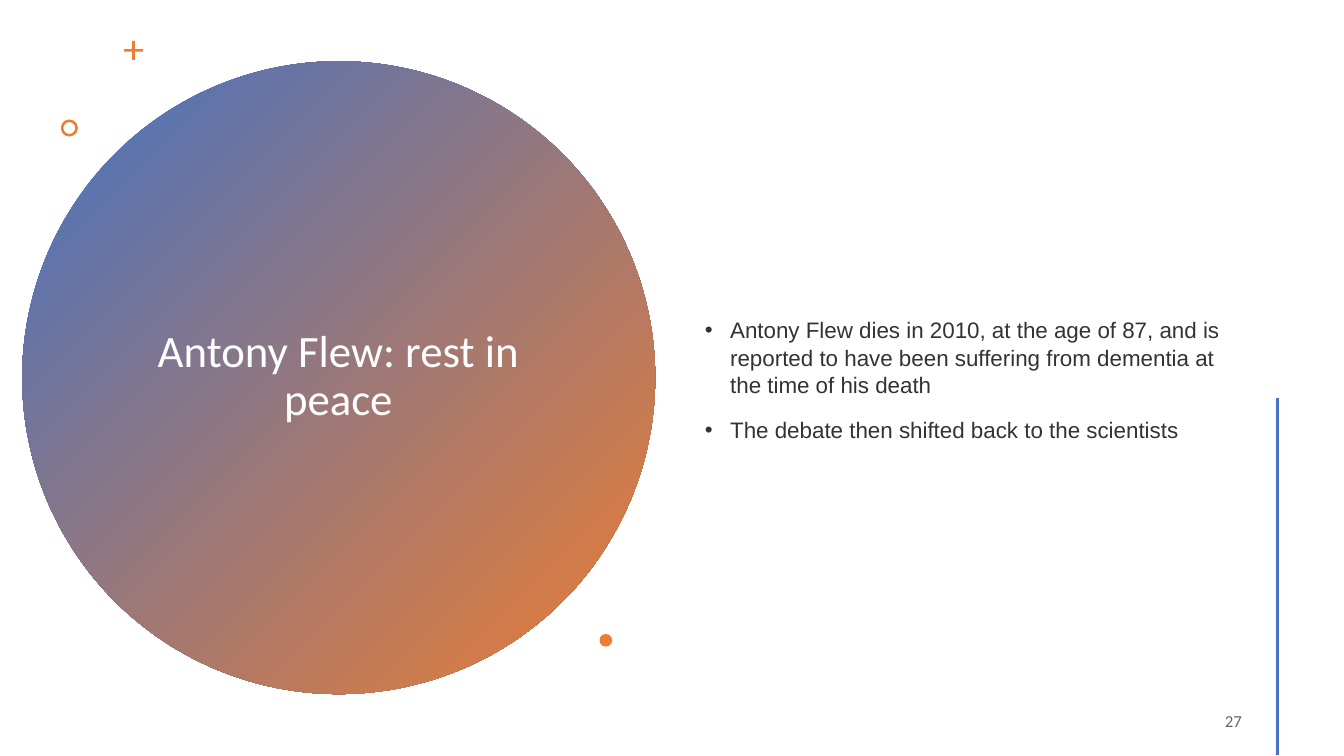
from dataclasses import dataclass

from lxml import etree
from pptx import Presentation
from pptx import util as u
from pptx.dml.color import RGBColor
from pptx.enum import shapes, text
from pptx.oxml import ns

BLUE = RGBColor(0x44, 0x72, 0xC4)
ORANGE = RGBColor(0xED, 0x7D, 0x31)
WHITE = RGBColor(0xFF, 0xFF, 0xFF)
DARK_GREY = RGBColor(0x33, 0x33, 0x33)
MID_GREY = RGBColor(0x66, 0x66, 0x66)

TITLE = "Antony Flew: rest in peace"
POINTS = [
    "Antony Flew dies in 2010, at the age of 87, and is reported to have been "
    "suffering from dementia at the time of his death",
    "The debate then shifted back to the scientists",
]
PAGE_NUMBER = "27"


@dataclass
class Box:
    left: int
    top: int
    width: int
    height: int

    def share(self, left, top, width, height):
        return Box(
            self.left + int(self.width * left / 100),
            self.top + int(self.height * top / 100),
            int(self.width * width / 100),
            int(self.height * height / 100),
        )

    def bounds(self):
        return self.left, self.top, self.width, self.height


def move(shape, box):
    shape.left, shape.top, shape.width, shape.height = box.bounds()


def style_font(paragraph, name, size, color):
    paragraph.font.name = name
    paragraph.font.size = u.Pt(size)
    paragraph.font.color.rgb = color


def prepare_frame(shape):
    frame = shape.text_frame
    frame.word_wrap = True
    frame.auto_size = text.MSO_AUTO_SIZE.NONE
    frame.vertical_anchor = text.MSO_ANCHOR.MIDDLE
    return frame


def add_plain_shape(slide, kind, box):
    shape = slide.shapes.add_shape(kind, *box.bounds())
    shape.shadow.inherit = False
    shape.line.fill.background()
    return shape


def add_title_circle(slide, box):
    circle = add_plain_shape(slide, shapes.MSO_SHAPE.OVAL, box)
    circle.fill.gradient()
    circle.fill.gradient_angle = 315
    for stop, color in zip(circle.fill.gradient_stops, (BLUE, ORANGE)):
        stop.color.rgb = color

    title = slide.shapes.title
    title.element.addprevious(circle.element)
    move(title, box.share(18.2, 12.7, 63.5, 74.4))
    frame = prepare_frame(title)
    frame.text = TITLE
    paragraph = frame.paragraphs[0]
    paragraph.alignment = text.PP_ALIGN.CENTER
    paragraph.line_spacing = 0.9
    style_font(paragraph, "Calibri", 32, WHITE)


def add_accents(slide, box):
    accents = [
        (shapes.MSO_SHAPE.CROSS, 16.1, -3.2, 3, 0.43),
        (shapes.MSO_SHAPE.DONUT, 6.1, 9.2, 2.7, 0.15),
        (shapes.MSO_SHAPE.OVAL, 91.2, 90.5, 2, None),
    ]
    for kind, left, top, size, adjustment in accents:
        accent = add_plain_shape(slide, kind, box.share(left, top, size, size))
        accent.fill.solid()
        accent.fill.fore_color.rgb = ORANGE
        if adjustment is not None:
            accent.adjustments[0] = adjustment


def add_points(slide, box):
    body = slide.placeholders[1]
    move(body, box)
    frame = prepare_frame(body)
    frame.text = "\n".join(POINTS)
    for paragraph in frame.paragraphs:
        paragraph.space_before = paragraph.space_after = u.Pt(6)
        paragraph.line_spacing = 1.03
        style_font(paragraph, "Arial", 16, DARK_GREY)
        properties = paragraph._p.get_or_add_pPr()
        properties.set("marL", str(u.Inches(0.25)))
        properties.set("indent", str(-u.Inches(0.25)))
        bullet_font = etree.Element(ns.qn("a:buFont"), typeface="Arial")
        bullet = etree.Element(ns.qn("a:buChar"), char="•")
        defaults = properties.find(ns.qn("a:defRPr"))
        defaults.addprevious(bullet_font)
        defaults.addprevious(bullet)


def add_page_number(slide, box):
    frame = prepare_frame(slide.shapes.add_textbox(*box.bounds()))
    frame.text = PAGE_NUMBER
    paragraph = frame.paragraphs[0]
    paragraph.alignment = text.PP_ALIGN.RIGHT
    paragraph.space_after = u.Pt(6)
    style_font(paragraph, "Calibri", 12, MID_GREY)


def add_side_rule(slide, box):
    rule = slide.shapes.add_connector(
        shapes.MSO_CONNECTOR.STRAIGHT,
        box.left, box.top, box.left, box.top + box.height,
    )
    rule.line.color.rgb = BLUE
    rule.line.width = u.Pt(2)
    etree.SubElement(rule.element.spPr, ns.qn("a:effectLst"))


def build_slide(presentation):
    slide = presentation.slides.add_slide(presentation.slide_layouts[1])
    page = Box(0, 0, presentation.slide_width, presentation.slide_height)
    circle = page.share(1.65, 8.1, 47.1, 0)
    circle.height = circle.width
    add_title_circle(slide, circle)
    add_accents(slide, circle)
    add_points(slide, page.share(51.7, 7.6, 40.05, 85.1))
    add_page_number(slide, page.share(70.65, 92.65, 22.5, 5.35))
    add_side_rule(slide, page.share(95.05, 52.65, 0, 47.25))


def main():
    presentation = Presentation()
    presentation.slide_width = u.Inches(13.33)
    presentation.slide_height = u.Inches(7.5)
    build_slide(presentation)
    presentation.save("out.pptx")


if __name__ == "__main__":
    main()
